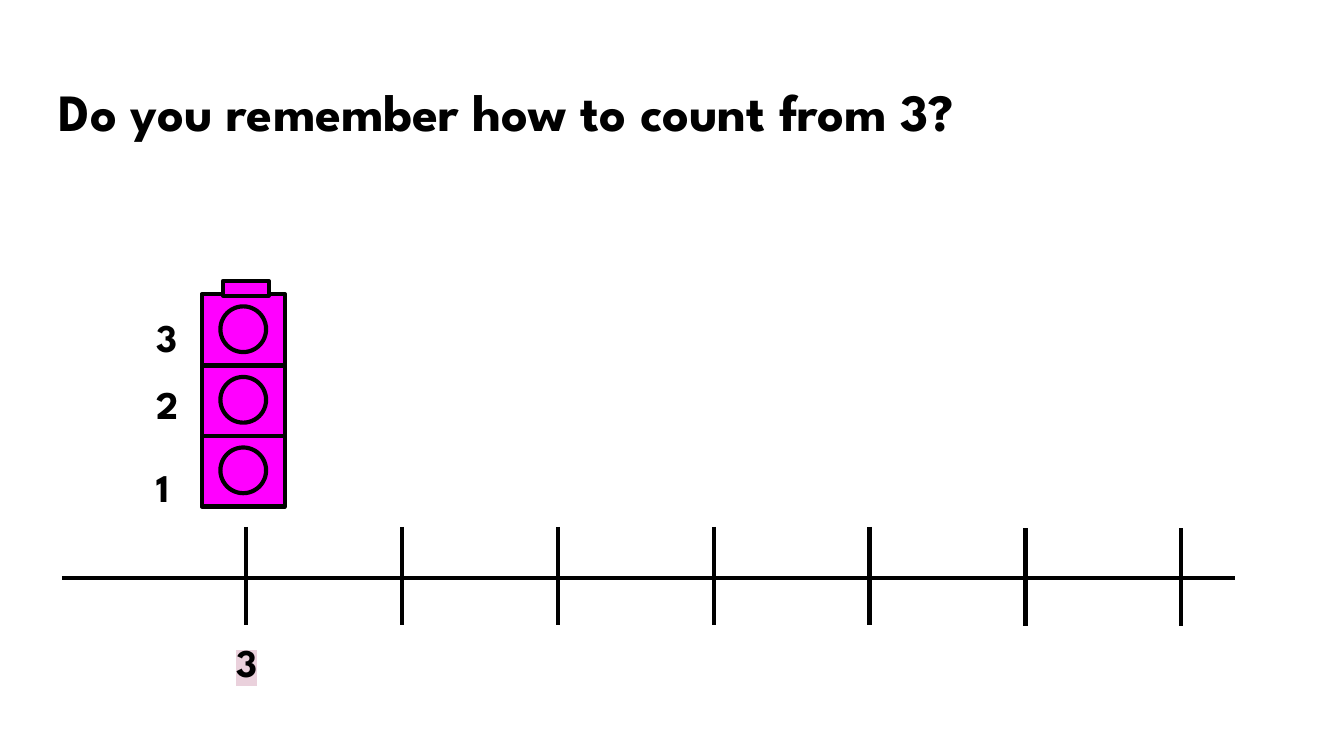
from dataclasses import dataclass

from lxml.etree import SubElement
from pptx import Presentation
from pptx.dml.color import RGBColor
from pptx.enum.shapes import MSO_CONNECTOR, MSO_SHAPE
from pptx.oxml.ns import qn
from pptx.util import Inches, Pt


@dataclass(frozen=True)
class Theme:
    font: str = "League Spartan"
    ink: str = "000000"
    cube: str = "FF00FF"
    highlight: str = "EAD1DC"
    title_size: float = 28
    label_size: float = 21
    line_width: float = 2.25


class SlideBuilder:
    def __init__(self, slide, theme):
        self.slide = slide
        self.theme = theme

    def outline(self, line):
        line.color.rgb = RGBColor.from_string(self.theme.ink)
        line.width = Pt(self.theme.line_width)

    def text(self, text, x, y, w, h, size, highlight=None):
        box = self.slide.shapes.add_textbox(Inches(x), Inches(y), Inches(w), Inches(h))
        tf = box.text_frame
        tf.word_wrap = True
        tf.margin_left = tf.margin_right = Inches(0.1)
        tf.margin_top = tf.margin_bottom = Inches(0.1)
        tf.text = text
        r = tf.paragraphs[0].runs[0]
        r.font.size = Pt(size)
        r.font.bold = True
        r.font.color.rgb = RGBColor.from_string(self.theme.ink)
        if highlight:
            mark = SubElement(r.font._element, qn("a:highlight"))
            SubElement(mark, qn("a:srgbClr"), val=highlight)
        r.font.name = self.theme.font

    def line(self, x1, y1, x2, y2):
        cxn = self.slide.shapes.add_connector(
            MSO_CONNECTOR.STRAIGHT, Inches(x1), Inches(y1), Inches(x2), Inches(y2))
        self.outline(cxn.line)
        SubElement(cxn._element.spPr, qn("a:effectLst"))

    def shape(self, kind, x, y, w, h):
        sp = self.slide.shapes.add_shape(kind, Inches(x), Inches(y), Inches(w), Inches(h))
        sp.shadow.inherit = False
        sp.fill.solid()
        sp.fill.fore_color.rgb = RGBColor.from_string(self.theme.cube)
        self.outline(sp.line)

    def cube(self, x, y):
        self.shape(MSO_SHAPE.RECTANGLE, x, y, 0.62, 0.53)
        self.shape(MSO_SHAPE.OVAL, x + 0.14, y + 0.09, 0.34, 0.34)


def main():
    prs = Presentation()
    prs.slide_width = Inches(10)
    prs.slide_height = prs.slide_width * 9 // 16
    theme = Theme()
    s = SlideBuilder(prs.slides.add_slide(prs.slide_layouts[6]), theme)

    s.text("Do you remember how to count from 3?", 0.34, 0.49, 9.32, 0.63, theme.title_size)

    s.line(0.46, 4.3, 9.19, 4.3)
    for i in range(7):
        x = 1.83 + 1.16 * i
        top = 3.92 if i < 5 else 3.93
        s.line(x, top, x, top + 0.73)

    for number, label_y in enumerate((3.35, 2.73, 2.23), start=1):
        s.cube(1.5, 3.24 - 0.525 * (number - 1))
        s.text(str(number), 1.07, label_y, 0.5, 0.31, theme.label_size)
    s.shape(MSO_SHAPE.RECTANGLE, 1.66, 2.09, 0.34, 0.11)

    s.text("3", 1.66, 4.65, 0.5, 0.31, theme.label_size, theme.highlight)

    prs.save("out.pptx")


if __name__ == "__main__":
    main()
